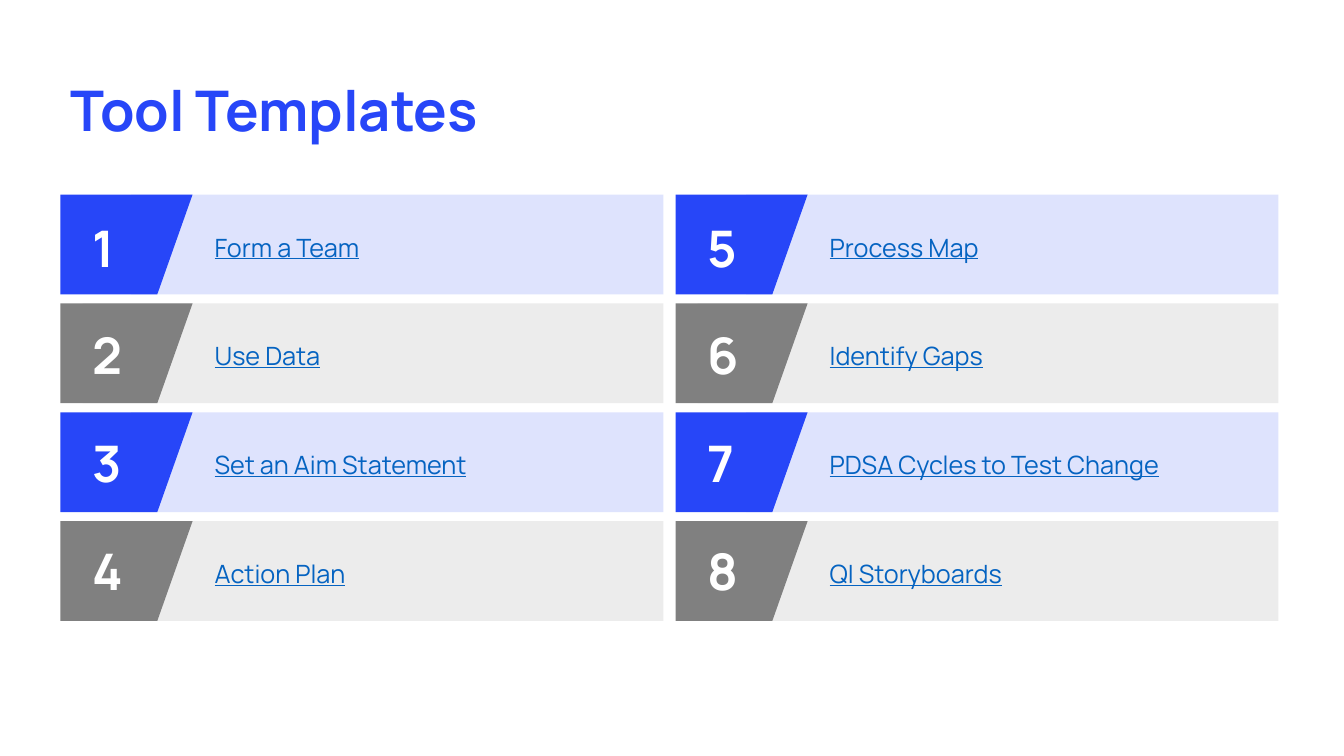
from lxml import etree
from pptx import Presentation
from pptx.dml.color import RGBColor
from pptx.enum.shapes import MSO_SHAPE
from pptx.enum.text import MSO_ANCHOR, MSO_AUTO_SIZE
from pptx.oxml.ns import qn
from pptx.util import Inches, Pt

RECTANGLE = MSO_SHAPE.RECTANGLE
TOP, MIDDLE = MSO_ANCHOR.TOP, MSO_ANCHOR.MIDDLE
GROW = MSO_AUTO_SIZE.SHAPE_TO_FIT_TEXT

BLUE = RGBColor(0x27, 0x46, 0xF8)
GREY = RGBColor(0x80, 0x80, 0x80)
LIGHT_GREY = RGBColor(0xD9, 0xD9, 0xD9)
LINK_BLUE = RGBColor(0x05, 0x63, 0xC1)
WHITE = RGBColor(0xFF, 0xFF, 0xFF)
FONT = "Manrope"

COLUMNS = [
    ["Form a Team", "Use Data", "Set an Aim Statement", "Action Plan"],
    ["Process Map", "Identify Gaps", "PDSA Cycles to Test Change", "QI Storyboards"],
]
LEFT, COLUMN_PITCH = 0.6, 6.1
TOP_ROW, ROW_PITCH, ROW_HEIGHT = 1.93, 1.08, 0.99

# Tag colour, band colour, band opacity in percent, band indent
ROW_STYLES = [(BLUE, BLUE, 15, 0.7), (GREY, LIGHT_GREY, 49, 0.22)]


def paint(shape, color, opacity=100):
    shape.shadow.inherit = False
    shape.line.fill.background()
    shape.fill.solid()
    shape.fill.fore_color.rgb = color
    if opacity < 100:
        clr = shape.fill._xPr.find(".//" + qn("a:srgbClr"))
        etree.SubElement(clr, qn("a:alpha"), val=str(opacity * 1000))


def add_text(s, text, x, y, w, h, size, color, anchor):
    tf = s.shapes.add_textbox(Inches(x), Inches(y), Inches(w), Inches(h)).text_frame
    tf.word_wrap = True
    tf.auto_size = GROW
    tf.vertical_anchor = anchor
    tf.text = text
    font = tf.paragraphs[0].runs[0].font
    font.name = FONT
    font.size = Pt(size)
    font.color.rgb = color
    return font


prs = Presentation()
prs.slide_width, prs.slide_height = Inches(13.33), Inches(7.5)
s = prs.slides.add_slide(prs.slide_layouts[5])

# Title
title = s.shapes.title
title.left, title.top = Inches(0.6), Inches(0.4)
title.width, title.height = Inches(11.81), Inches(1.45)
tf = title.text_frame
tf.text = "Tool Templates"
tf.vertical_anchor = MIDDLE
p = tf.paragraphs[0]
p.alignment = 1
p.line_spacing = 0.9
r = p.runs[0]
r.font.name, r.font.size, r.font.bold = FONT, Pt(40), True
r.font.color.rgb = BLUE

# Numbered tool rows in two columns
for col, tools in enumerate(COLUMNS):
    x = LEFT + col * COLUMN_PITCH
    for row, tool in enumerate(tools):
        y = TOP_ROW + row * ROW_PITCH
        tag_color, band_color, opacity, indent = ROW_STYLES[row % 2]

        # Pale band
        band = s.shapes.add_shape(RECTANGLE, Inches(x + indent), Inches(y),
                                  Inches(5.98 - indent), Inches(ROW_HEIGHT))
        paint(band, band_color, opacity)

        # Slanted number tag
        builder = s.shapes.build_freeform(Inches(x), Inches(y))
        builder.add_line_segments([
            (Inches(x + 1.31), Inches(y)),
            (Inches(x + 0.96), Inches(y + ROW_HEIGHT)),
            (Inches(x), Inches(y + ROW_HEIGHT)),
        ])
        paint(builder.convert_to_shape(), tag_color)

        # Number and tool name
        number = str(col * len(tools) + row + 1)
        font = add_text(s, number, x + 0.22, 2.1 + row * 1.07, 0.56, 0.71,
                        36, WHITE, TOP)
        font.bold = True
        font = add_text(s, tool, x + 1.43, y + 0.32, 4.05, 0.4,
                        18, LINK_BLUE, MIDDLE)
        font.underline = True

prs.save("out.pptx")
